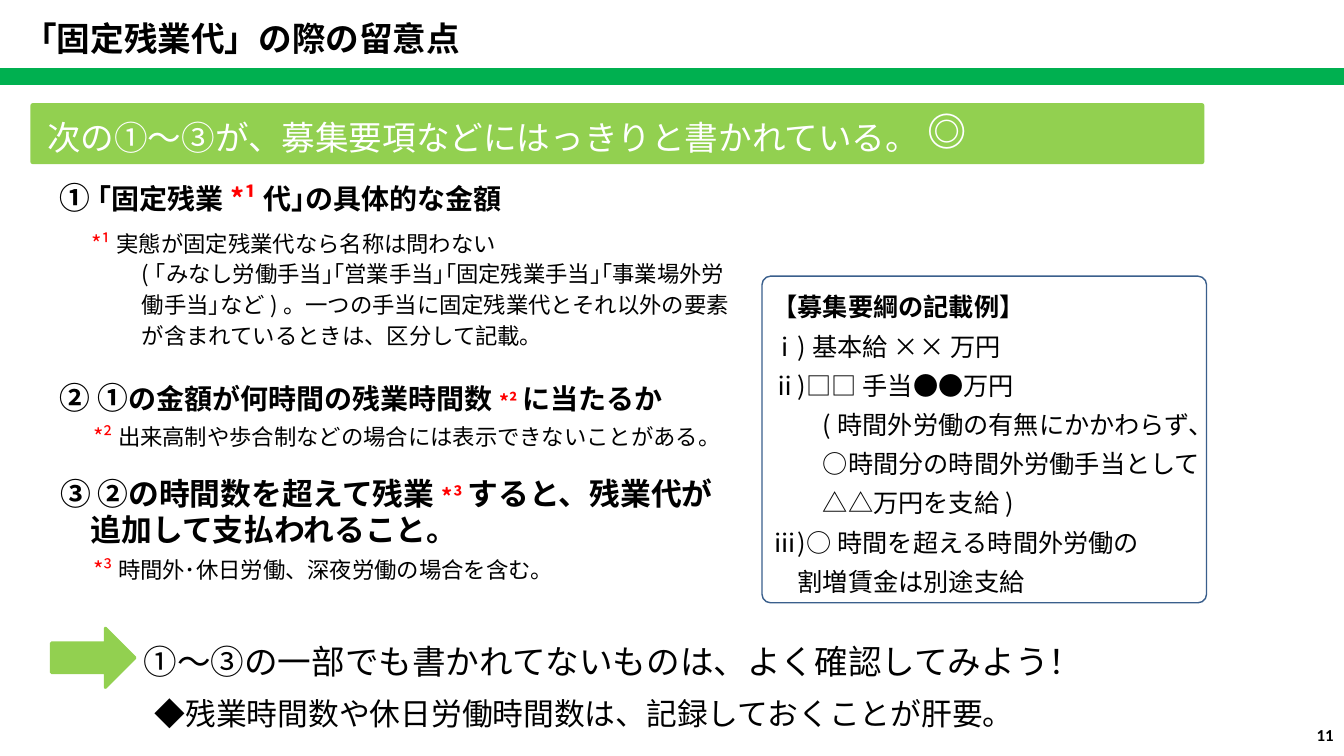
import pptx
import pptx.util
import pptx.dml.color
import pptx.enum.shapes
import pptx.enum.text
import pptx.oxml.ns
import lxml.etree

Pt = pptx.util.Pt
RGBColor = pptx.dml.color.RGBColor
SHAPE = pptx.enum.shapes.MSO_SHAPE
ANCHOR = pptx.enum.text.MSO_ANCHOR
ALIGN = pptx.enum.text.PP_ALIGN
AUTO_SIZE = pptx.enum.text.MSO_AUTO_SIZE

BLACK = RGBColor(0x00, 0x00, 0x00)
WHITE = RGBColor(0xFF, 0xFF, 0xFF)
RED = RGBColor(0xFF, 0x00, 0x00)
LIME = RGBColor(0x92, 0xD0, 0x50)
GREEN = RGBColor(0x00, 0xB0, 0x50)
NAVY = RGBColor(0x3A, 0x5F, 0x8C)

JAPANESE_FONT = "Noto Sans CJK JP"
NUMBER_FONT = "Calibri"
CORNER = 0.026
INDENT = 36
BOX_FORMAT = {
    "word_wrap": True,
    "vertical_anchor": ANCHOR.MIDDLE,
    "margin_left": Pt(5.76),
    "margin_top": Pt(2.88),
    "margin_right": Pt(0),
    "margin_bottom": Pt(2.88),
}


def apply_format(target, values):
    for name, value in values.items():
        setattr(target, name, value)


def add_run(paragraph, text, size, color=BLACK, bold=False, font=JAPANESE_FONT):
    run = paragraph.add_run()
    run.text = text
    apply_format(run.font, {"name": font, "size": Pt(size), "bold": bold})
    run.font.color.rgb = color
    east_asian = lxml.etree.SubElement(run.font._element, pptx.oxml.ns.qn("a:ea"))
    east_asian.set("typeface", font)


def fill_paragraph(paragraph, runs, spacing, level=0):
    apply_format(paragraph, {
        "alignment": ALIGN.LEFT, "line_spacing": Pt(spacing), "level": level,
    })
    if level:
        properties = paragraph._p.get_or_add_pPr()
        properties.set("marL", str(Pt(INDENT * level)))
        properties.set("indent", "0")
    for run in runs:
        add_run(paragraph, *run)


def add_block(slide, kind, place, fill=None, line=None, width=1):
    shape = slide.shapes.add_shape(kind, *map(Pt, place))
    shape.shadow.inherit = False
    if fill is None:
        shape.fill.background()
    else:
        shape.fill.solid()
        shape.fill.fore_color.rgb = fill
    if line is None:
        shape.line.fill.background()
    else:
        shape.line.color.rgb = line
        shape.line.width = Pt(width)
    return shape


def add_text_block(slide, place, paragraphs, spacing, fill=None, line=None, right=0):
    shape = add_block(slide, SHAPE.ROUNDED_RECTANGLE, place, fill, line)
    shape.adjustments[0] = CORNER
    frame = shape.text_frame
    apply_format(frame, {**BOX_FORMAT, "margin_right": Pt(right)})
    for index, (runs, level) in enumerate(paragraphs):
        paragraph = frame.add_paragraph() if index else frame.paragraphs[0]
        fill_paragraph(paragraph, runs, spacing, level)


def add_line(slide, place, runs, spacing, fill=None, line=None):
    add_text_block(slide, place, [(runs, 0)], spacing, fill, line)


def add_note(slide, place, mark, text, spacing, details=(), right=0):
    paragraphs = [([(mark, 16, RED), (text, 16)], 0)]
    paragraphs += [([(detail, 16)], 1) for detail in details]
    add_text_block(slide, place, paragraphs, spacing, right=right)


def set_title(slide, text):
    title = slide.shapes.title
    apply_format(title, {
        "left": Pt(9.4), "top": Pt(9.4), "width": Pt(850.3), "height": Pt(36),
    })
    apply_format(title.text_frame, {
        "word_wrap": True, "vertical_anchor": ANCHOR.TOP,
        "auto_size": AUTO_SIZE.SHAPE_TO_FIT_TEXT,
    })
    paragraph = title.text_frame.paragraphs[0]
    paragraph.alignment = ALIGN.LEFT
    add_run(paragraph, text, 24, BLACK, True)


def add_page_number(slide, number):
    box = slide.shapes.add_textbox(Pt(735.8), Pt(510.5), Pt(223.9), Pt(28.8))
    apply_format(box.text_frame, {"word_wrap": True, "vertical_anchor": ANCHOR.MIDDLE})
    paragraph = box.text_frame.paragraphs[0]
    paragraph.alignment = ALIGN.RIGHT
    add_run(paragraph, number, 12, BLACK, True, NUMBER_FONT)


def add_points(slide):
    add_line(slide, (36.7, 122.4, 439.2, 33.8), [
        ("① ", 22, BLACK, True), ("｢固定残業", 20, BLACK, True),
        ("*¹", 20, RED, True), ("代｣の具体的な金額", 20, BLACK, True),
    ], 30, WHITE)
    add_text_block(slide, (36.7, 337, 500.4, 56.9), [
        ([("③ ②の時間数を超えて残業", 22, BLACK, True), ("*³", 16, RED, True),
          ("すると、残業代が", 22, BLACK, True)], 0),
        ([("　追加して支払われること。", 22, BLACK, True)], 0),
    ], 26, WHITE)
    add_line(slide, (36.7, 256.3, 439.2, 51.8), [
        ("② ①", 22, BLACK, True), ("の金額が何時間の残業時間数", 20, BLACK, True),
        ("*²", 14, RED, True), ("に当たるか", 20, BLACK, True),
    ], 30, WHITE)


def add_notes(slide):
    add_note(slide, (59, 157, 477.4, 96.5), "*¹", "実態が固定残業代なら名称は問わない", 22, [
        "(｢みなし労働手当｣｢営業手当｣｢固定残業手当｣｢事業場外労働手当｣など)。"
        "一つの手当に固定残業代とそれ以外の要素が含まれているときは、区分して記載。",
    ], 2.88)
    add_note(slide, (60.5, 289.4, 456.5, 33.8), "*²",
             "出来高制や歩合制などの場合には表示できないことがある。", 30)
    add_note(slide, (60.5, 388.8, 411.1, 33.1), "*³",
             "時間外･休日労働、深夜労働の場合を含む。", 22, right=2.88)


def add_example(slide):
    lines = [
        ("ⅰ)基本給××万円", 0),
        ("ⅱ)□□手当●●万円", 0),
        ("(時間外労働の有無にかかわらず、○時間分の時間外労働手当として△△万円を支給)", 1),
        ("ⅲ)○時間を超える時間外労働の", 0),
        ("　割増賃金は別途支給", 0),
    ]
    paragraphs = [([("【募集要綱の記載例】", 18, BLACK, True)], 0)]
    paragraphs += [([(text, 18)], level) for text, level in lines]
    add_text_block(slide, (544.3, 197.3, 317.5, 233.3), paragraphs, 28, WHITE, NAVY)


def main():
    presentation = pptx.Presentation()
    presentation.slide_width = Pt(960)
    presentation.slide_height = Pt(540)
    slide = presentation.slides.add_slide(presentation.slide_layouts[5])
    set_title(slide, "「固定残業代」の際の留意点")
    add_block(slide, SHAPE.RECTANGLE, (0, 49.7, 960, 10.1), GREEN, GREEN, 2)
    add_line(slide, (22.3, 74.2, 837.4, 42.5),
             [(" 次の①～③が、募集要項などにはっきりと書かれている。", 24, WHITE)],
             34, LIME, LIME)
    add_line(slide, (656.6, 74.2, 41, 42.5), [("◎", 28, WHITE, True)], 30)
    add_points(slide)
    add_example(slide)
    add_notes(slide)
    add_block(slide, SHAPE.RIGHT_ARROW, (36.7, 448.6, 59.8, 42.5), LIME, LIME, 2)
    add_line(slide, (96.5, 448.6, 695.5, 42.5),
             [("①～③の一部でも書かれてないものは、よく確認してみよう！", 24)], 34)
    add_line(slide, (104.4, 491, 661, 33.8),
             [("◆残業時間数や休日労働時間数は、記録しておくことが肝要。", 22)], 30)
    add_page_number(slide, "11")
    presentation.save("out.pptx")


if __name__ == "__main__":
    main()
